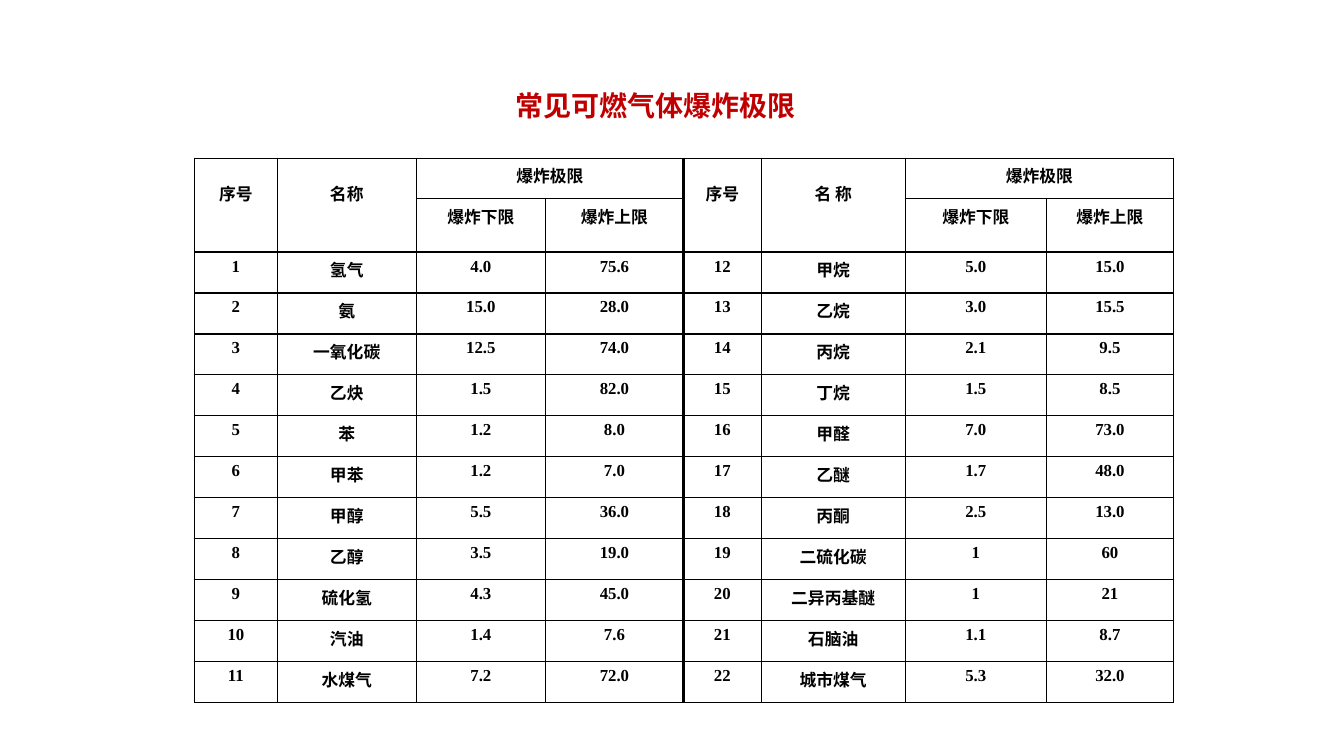
from dataclasses import dataclass

from lxml import etree
from pptx import Presentation
from pptx import util as u
from pptx.dml.color import RGBColor
from pptx.enum import text
from pptx.oxml import ns


@dataclass(frozen=True)
class Theme:
    ink: str = "000000"
    paper: str = "FFFFFF"
    accent: str = "C00000"
    latin: str = "Times New Roman"
    cjk: str = "Noto Sans CJK SC"
    title_size: int = 20
    cell_size: int = 12
    thin: int = 1
    thick: int = 2


THEME = Theme()
TITLE = "常见可燃气体爆炸极限"
TITLE_BOX = (5.01, 0.87, 5.99, 1.15)
TABLE_BOX = (1.93, 1.57, 9.71, 5.4)
COLUMNS = [0.82, 1.38, 1.28, 1.37, 0.77, 1.43, 1.4, 1.26]
HEADER_ROWS = [0.4, 0.53]
HALF = len(COLUMNS) // 2
LABEL_DROP = 0.23  # top margin of the two-row header labels

# name, lower limit, upper limit
GASES = [
    ("氢气", "4.0", "75.6"),
    ("氨", "15.0", "28.0"),
    ("一氧化碳", "12.5", "74.0"),
    ("乙炔", "1.5", "82.0"),
    ("苯", "1.2", "8.0"),
    ("甲苯", "1.2", "7.0"),
    ("甲醇", "5.5", "36.0"),
    ("乙醇", "3.5", "19.0"),
    ("硫化氢", "4.3", "45.0"),
    ("汽油", "1.4", "7.6"),
    ("水煤气", "7.2", "72.0"),
    ("甲烷", "5.0", "15.0"),
    ("乙烷", "3.0", "15.5"),
    ("丙烷", "2.1", "9.5"),
    ("丁烷", "1.5", "8.5"),
    ("甲醛", "7.0", "73.0"),
    ("乙醚", "1.7", "48.0"),
    ("丙酮", "2.5", "13.0"),
    ("二硫化碳", "1", "60"),
    ("二异丙基醚", "1", "21"),
    ("石脑油", "1.1", "8.7"),
    ("城市煤气", "5.3", "32.0"),
]


def write(tf, words, size=THEME.cell_size, color=THEME.ink, font=THEME.latin,
          align=text.PP_ALIGN.CENTER, line_spacing=None):
    p = tf.paragraphs[0]
    p.alignment = align
    p.line_spacing = line_spacing
    r = p.add_run()
    r.text = words
    r.font.size = u.Pt(size)
    r.font.bold = True
    r.font.name = font
    r.font.color.rgb = RGBColor.from_string(color)
    ea = etree.SubElement(r.font._element, ns.qn("a:ea"))
    ea.set("typeface", THEME.cjk)


def style_cell(cell, col):
    """Rule the cell on all sides, heavier where the two halves meet."""
    tc_pr = cell._tc.get_or_add_tcPr()
    heavy = {HALF - 1: "lnR", HALF: "lnL"}.get(col)
    for side in ("lnL", "lnR", "lnT", "lnB"):
        width = THEME.thick if side == heavy else THEME.thin
        ln = etree.SubElement(tc_pr, ns.qn("a:" + side), w=str(u.Pt(width)))
        fill = etree.SubElement(ln, ns.qn("a:solidFill"))
        etree.SubElement(fill, ns.qn("a:srgbClr"), val=THEME.ink)
    cell.fill.solid()
    cell.fill.fore_color.rgb = RGBColor.from_string(THEME.paper)


def add_title(slide, box):
    sp = slide.shapes.add_textbox(*map(u.Inches, box))
    tf = sp.text_frame
    tf.word_wrap = True
    write(tf, TITLE, size=THEME.title_size, color=THEME.accent,
          font=THEME.cjk, align=text.PP_ALIGN.LEFT, line_spacing=0.9)


def fill_half(table, first, name_label, start, gases):
    """Write the header and gases of the half that begins at column first."""
    for col, label in enumerate(("序号", name_label), first):
        cell = table.cell(0, col)
        cell.merge(table.cell(1, col))
        cell.margin_top = u.Inches(LABEL_DROP)
        write(cell.text_frame, label)
    limits = table.cell(0, first + 2)
    limits.merge(table.cell(0, first + 3))
    write(limits.text_frame, "爆炸极限")
    for col, label in enumerate(("爆炸下限", "爆炸上限"), first + 2):
        write(table.cell(1, col).text_frame, label)
    for i, gas in enumerate(gases):
        for col, value in enumerate((str(start + i), *gas), first):
            write(table.cell(len(HEADER_ROWS) + i, col).text_frame, value)


def add_limits_table(slide, box):
    count = len(GASES) // 2
    row_height = (box[3] - sum(HEADER_ROWS)) / count
    heights = HEADER_ROWS + [row_height] * count
    frame = slide.shapes.add_table(len(heights), len(COLUMNS), *map(u.Inches, box))
    table = frame.table
    table.first_row = table.horz_banding = False
    for column, width in zip(table.columns, COLUMNS):
        column.width = u.Inches(width)
    for row, height in zip(table.rows, heights):
        row.height = u.Inches(height)
        for col, cell in enumerate(row.cells):
            style_cell(cell, col)
    fill_half(table, 0, "名称", 1, GASES[:count])
    fill_half(table, HALF, "名 称", count + 1, GASES[count:])


def main():
    prs = Presentation()
    prs.slide_width, prs.slide_height = u.Inches(13.33), u.Inches(7.5)
    slide = prs.slides.add_slide(prs.slide_layouts[6])
    add_title(slide, TITLE_BOX)
    add_limits_table(slide, TABLE_BOX)
    prs.save("out.pptx")


if __name__ == "__main__":
    main()
